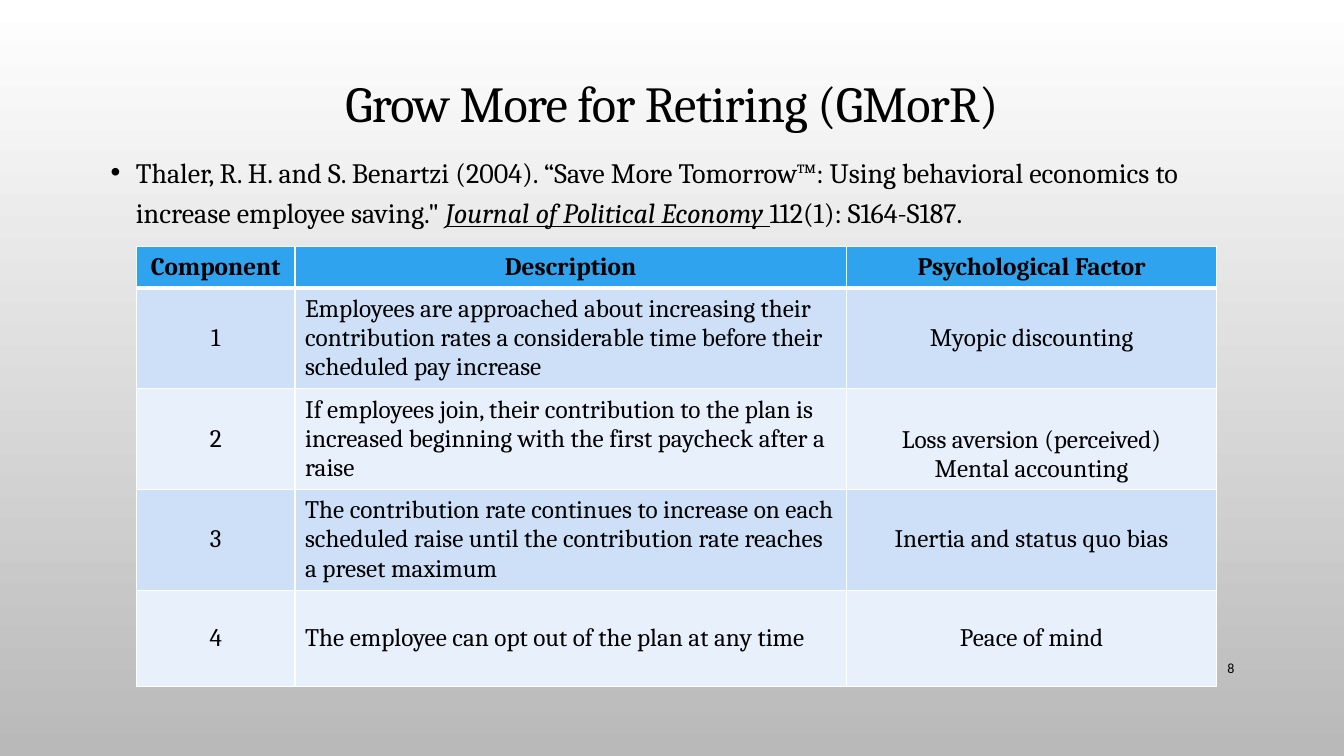
from lxml.etree import SubElement
from pptx import Presentation
from pptx.dml.color import RGBColor
from pptx.enum.text import MSO_ANCHOR, PP_ALIGN
from pptx.oxml.ns import qn
from pptx.util import Pt

PX = 9525  # EMU in one px, 96 px to the inch
COLORS = {
    "text": "000000", "top": "FFFFFF", "bottom": "B9B9B9", "border": "FFFFFF",
    "header": "2FA3EE", "odd": "CDE0F8", "even": "E8F0FC",
}
COLUMN_WIDTHS = [151, 525, 353]
HEADER_HEIGHT, ROW_HEIGHT = 39, 92
HEADINGS = ["Component", "Description", "Psychological Factor"]
COMPONENTS = [
    ("Employees are approached about increasing their contribution rates "
     "a considerable time before their scheduled pay increase",
     ["Myopic discounting"]),
    ("If employees join, their contribution to the plan is increased "
     "beginning with the first paycheck after a raise",
     ["Loss aversion (perceived)", "Mental accounting"]),
    ("The contribution rate continues to increase on each scheduled raise "
     "until the contribution rate reaches a preset maximum",
     ["Inertia and status quo bias"]),
    ("The employee can opt out of the plan at any time", ["Peace of mind"]),
]


def color(name):
    return RGBColor.from_string(COLORS[name])


def add_span(para, text, size, font="Cambria", bold=False, cited=False):
    """Add one run; a cited run is italic and underlined."""
    span = para.add_run()
    span.text = text
    span.font.name = font
    span.font.size = Pt(size)
    span.font.color.rgb = color("text")
    span.font.bold = bold
    span.font.italic = span.font.underline = cited
    return span


def add_box(page, box, anchor, align):
    """Add a wrapping text box and return its first paragraph."""
    frame = page.shapes.add_textbox(*[side * PX for side in box]).text_frame
    frame.word_wrap = True
    frame.vertical_anchor = anchor
    para = frame.paragraphs[0]
    para.alignment = align
    return para


def add_title(page, box):
    para = add_box(page, box, MSO_ANCHOR.MIDDLE, PP_ALIGN.CENTER)
    para.line_spacing = 0.9
    span = add_span(para, "Grow More for Retiring (GMorR)", 36)
    span.font._element.set("spc", "-50")


def add_citation(page, box):
    para = add_box(page, box, MSO_ANCHOR.TOP, PP_ALIGN.LEFT)
    para.line_spacing = 1.2
    settings = para._p.get_or_add_pPr()
    settings.set("marL", str(24 * PX))
    settings.set("indent", str(-24 * PX))
    SubElement(settings, qn("a:buFont"), typeface="Arial")
    SubElement(settings, qn("a:buChar"), char="•")
    add_span(para, "Thaler, R. H. and S. Benartzi (2004). “Save More Tomorrow™: "
                   "Using behavioral economics to increase employee saving.\" ", 20)
    add_span(para, "Journal of Political Economy ", 20, cited=True)
    add_span(para, "112(1): S164-S187.", 20)


def add_borders(cell, top, bottom):
    settings = cell._tc.get_or_add_tcPr()
    for side, width in (("L", 1), ("R", 1), ("T", top), ("B", bottom)):
        line = SubElement(settings, qn("a:ln" + side), w=str(Pt(width)))
        fill = SubElement(line, qn("a:solidFill"))
        SubElement(fill, qn("a:srgbClr"), val=COLORS["border"])


def fill_cell(cell, lines, row, align):
    add_borders(cell, 3 if row == 1 else 1, 3 if row == 0 else 1)
    cell.fill.solid()
    cell.fill.fore_color.rgb = color(
        "header" if row == 0 else "odd" if row % 2 else "even")
    # Two-line factors sit at the foot of the row
    cell.vertical_anchor = MSO_ANCHOR.BOTTOM if len(lines) > 1 else MSO_ANCHOR.MIDDLE
    frame = cell.text_frame
    for index, text in enumerate(lines):
        para = frame.add_paragraph() if index else frame.paragraphs[0]
        para.alignment = align
        add_span(para, text, 18, bold=row == 0)


def add_components(page, left, top):
    rows = [[[heading] for heading in HEADINGS]]
    rows += [[[str(number)], [description], factors]
             for number, (description, factors) in enumerate(COMPONENTS, 1)]
    heights = [HEADER_HEIGHT] + [ROW_HEIGHT] * len(COMPONENTS)
    table = page.shapes.add_table(
        len(rows), len(HEADINGS), left * PX, top * PX,
        sum(COLUMN_WIDTHS) * PX, sum(heights) * PX).table
    for column, width in zip(table.columns, COLUMN_WIDTHS):
        column.width = width * PX
    for row, (cells, height) in enumerate(zip(rows, heights)):
        table.rows[row].height = height * PX
        for column, lines in enumerate(cells):
            described = row > 0 and column == 1
            fill_cell(table.cell(row, column), lines, row,
                      PP_ALIGN.LEFT if described else PP_ALIGN.CENTER)


def add_page_number(page, box):
    para = add_box(page, box, MSO_ANCHOR.MIDDLE, PP_ALIGN.RIGHT)
    add_span(para, "8", 10, font="Calibri")


def paint_background(page):
    fill = page.background.fill
    fill.gradient()
    fill.gradient_angle = 270
    for stop, name in zip(fill.gradient_stops, ("top", "bottom")):
        stop.color.rgb = color(name)


def main():
    deck = Presentation()
    deck.slide_width, deck.slide_height = 1280 * PX, 720 * PX
    page = deck.slides.add_slide(deck.slide_layouts[6])
    paint_background(page)
    add_title(page, (96, 65, 1088, 73))
    add_citation(page, (96, 137, 1088, 92))
    add_components(page, 130, 235)
    add_page_number(page, (1104, 617, 81, 38))
    deck.save("out.pptx")


if __name__ == "__main__":
    main()
